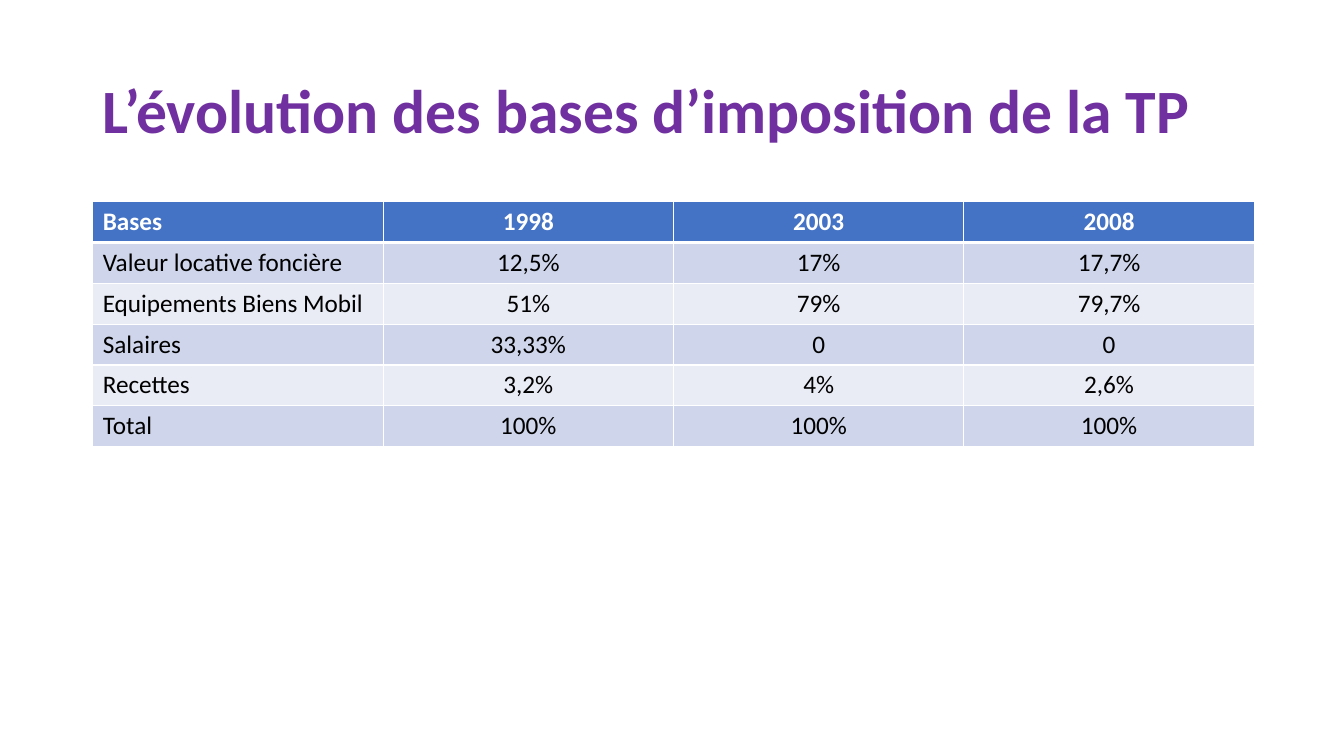
import pptx
import pptx.dml.color
import pptx.enum.text
import pptx.oxml
import pptx.oxml.ns
import pptx.util

COLORS = {"title": "7030A0", "header": "4472C4", "odd": "CFD5EA",
          "even": "E9EBF5", "white": "FFFFFF", "black": "000000"}
ROWS = [
    ["Bases", "1998", "2003", "2008"],
    ["Valeur locative foncière", "12,5%", "17%", "17,7%"],
    ["Equipements Biens Mobil", "51%", "79%", "79,7%"],
    ["Salaires", "33,33%", "0", "0"],
    ["Recettes", "3,2%", "4%", "2,6%"],
    ["Total", "100%", "100%", "100%"],
]
ALIGN = pptx.enum.text.PP_ALIGN
ANCHOR = pptx.enum.text.MSO_ANCHOR


class Deck:
    """Holds the style, the grid and the current slide."""

    font = "Calibri"
    margin, col, row = 0.92, 2.88, 0.4

    def __init__(self):
        self.prs = pptx.Presentation()
        self.prs.slide_width = pptx.util.Inches(13.33)
        self.prs.slide_height = pptx.util.Inches(7.5)
        self.s = self.prs.slides.add_slide(self.prs.slide_layouts[6])

    def box(self, col, row, cols, rows):
        return [pptx.util.Inches(v) for v in (
            self.margin + col * self.col, row * self.row,
            cols * self.col, rows * self.row)]

    def rgb(self, name):
        return pptx.dml.color.RGBColor.from_string(COLORS[name])

    def text(self, tf, text, size, color, bold, align=ALIGN.LEFT):
        p = tf.paragraphs[0]
        p.alignment = align
        r = p.add_run()
        r.text = text
        style = {"name": self.font, "size": pptx.util.Pt(size), "bold": bold}
        for key, value in style.items():
            setattr(r.font, key, value)
        r.font.color.rgb = self.rgb(color)
        return p

    def title(self, text, *grid):
        tf = self.s.shapes.add_textbox(*self.box(*grid)).text_frame
        for key, value in {"word_wrap": True, "vertical_anchor": ANCHOR.MIDDLE}.items():
            setattr(tf, key, value)
        self.text(tf, text, 44, "title", True).line_spacing = 0.9

    def borders(self, cell, widths):
        tc_pr = cell._tc.get_or_add_tcPr()
        for side, width in widths.items():
            tc_pr.append(pptx.oxml.parse_xml(
                f'<a:ln{side} {pptx.oxml.ns.nsdecls("a")} w="{pptx.util.Pt(width)}">'
                f'<a:solidFill><a:srgbClr val="{COLORS["white"]}"/></a:solidFill>'
                f'</a:ln{side}>'))

    def table(self, rows, *grid):
        frame = self.s.shapes.add_table(len(rows), len(rows[0]), *self.box(*grid))
        for i, values in enumerate(rows):
            fill = "header" if i == 0 else "odd" if i % 2 else "even"
            for j, text in enumerate(values):
                cell = frame.table.cell(i, j)
                self.borders(cell, {"L": 1, "R": 1, "T": 3 if i == 1 else 1,
                                    "B": 3 if i == 0 else 1})
                cell.fill.solid()
                cell.fill.fore_color.rgb = self.rgb(fill)
                self.text(cell.text_frame, text, 18, "black" if i else "white",
                          i == 0, ALIGN.CENTER if j else ALIGN.LEFT)


def main():
    deck = Deck()
    deck.title("L’évolution des bases d’imposition de la TP", 0, 1, 4, 3.62)
    deck.table(ROWS, 0, 5, 4, 6.08)
    deck.prs.save("out.pptx")


if __name__ == "__main__":
    main()
